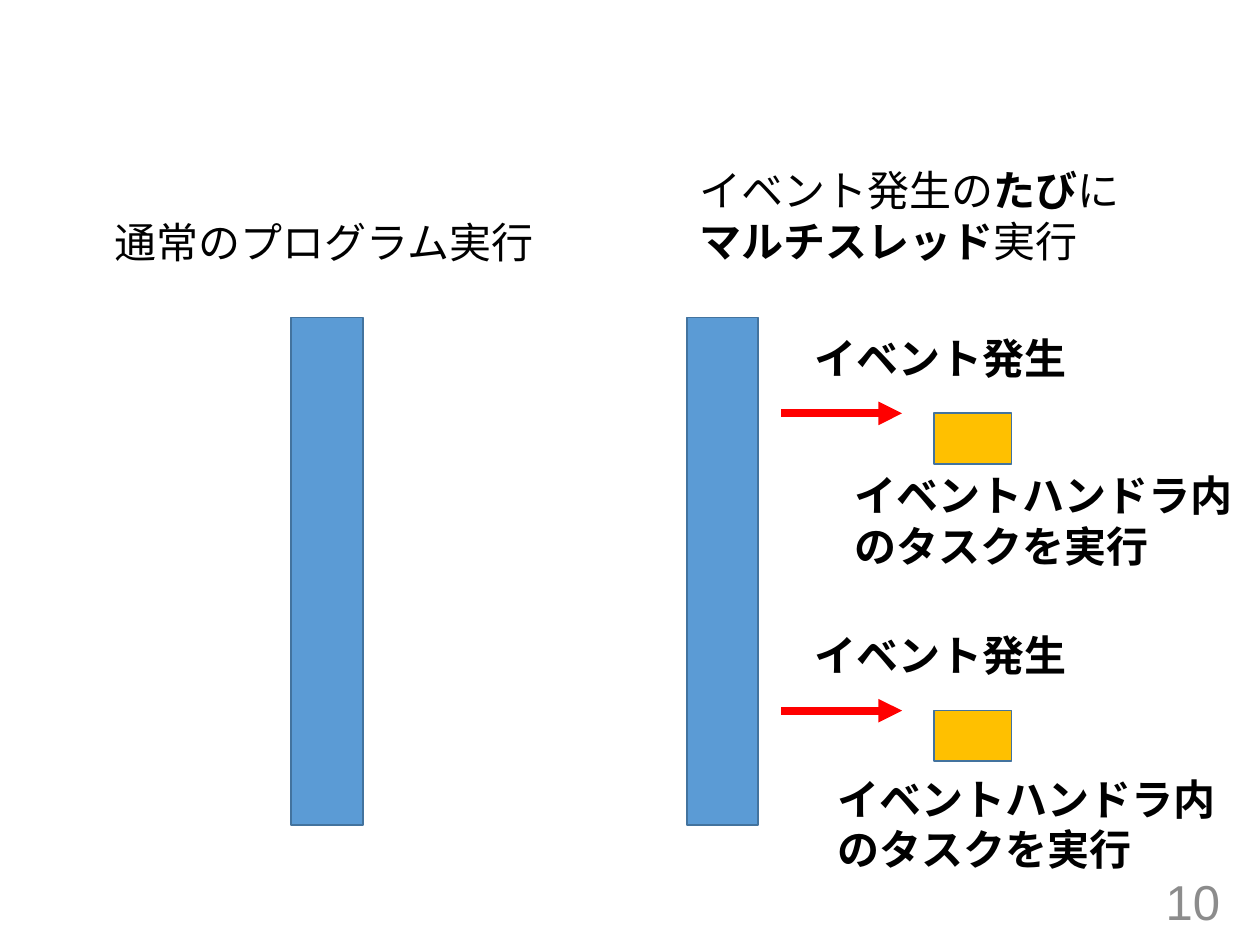
from dataclasses import dataclass

from lxml import etree
from pptx import Presentation
from pptx import util as u
from pptx.dml.color import RGBColor
from pptx.enum import shapes, text
from pptx.oxml import ns

Pt = u.Pt
BLACK = RGBColor(0x00, 0x00, 0x00)
GRAY = RGBColor(0x8C, 0x8C, 0x8C)
BLUE = RGBColor(0x5B, 0x9B, 0xD5)
OUTLINE = RGBColor(0x43, 0x73, 0x9E)
AMBER = RGBColor(0xFF, 0xC0, 0x00)
RED = RGBColor(0xFF, 0x00, 0x00)

LABEL_FONT = {"name": "Calibri", "size": Pt(24)}
NUMBER_FONT = {"name": "Arial", "size": Pt(28)}
BAR_TOP, BAR_WIDTH, BAR_HEIGHT = 181.4, 41, 290.2
TASK_LEFT, TASK_WIDTH, TASK_HEIGHT = 533.5, 44.6, 28.8
ARROW_START, ARROW_END = 446.4, 515.5


@dataclass(frozen=True)
class Box:
    left: float
    top: float
    width: float
    height: float

    def lengths(self) -> tuple:
        return Pt(self.left), Pt(self.top), Pt(self.width), Pt(self.height)


@dataclass(frozen=True)
class Run:
    content: str
    bold: bool = False


@dataclass(frozen=True)
class Event:
    arrow_y: float
    handler_left: float
    handler_top: float


EVENTS = (Event(236.2, 481, 265), Event(406.1, 471.6, 438.5))


def add_label(slide, box: Box, lines: list[list[Run]], font=LABEL_FONT,
              color=BLACK, alignment=text.PP_ALIGN.LEFT,
              anchor=text.MSO_ANCHOR.TOP, wrap=False) -> None:
    """Add a text box with one paragraph for each list of runs."""
    frame = slide.shapes.add_textbox(*box.lengths()).text_frame
    frame.word_wrap = wrap
    frame.vertical_anchor = anchor
    for index, runs in enumerate(lines):
        paragraph = frame.paragraphs[0] if index == 0 else frame.add_paragraph()
        paragraph.alignment = alignment
        for item in runs:
            run = paragraph.add_run()
            run.text = item.content
            for name, value in {**font, "bold": item.bold}.items():
                setattr(run.font, name, value)
            run.font.color.rgb = color


def add_block(slide, box: Box, fill: RGBColor) -> None:
    shape = slide.shapes.add_shape(shapes.MSO_SHAPE.RECTANGLE, *box.lengths())
    shape.shadow.inherit = False
    shape.fill.solid()
    shape.fill.fore_color.rgb = fill
    shape.line.color.rgb = OUTLINE
    shape.line.width = Pt(1)


def add_arrow(slide, y: float) -> None:
    arrow = slide.shapes.add_connector(
        shapes.MSO_CONNECTOR.STRAIGHT,
        Pt(ARROW_START), Pt(y), Pt(ARROW_END), Pt(y))
    arrow.line.color.rgb = RED
    arrow.line.width = Pt(4.5)
    etree.SubElement(arrow.line._get_or_add_ln(), ns.qn("a:tailEnd"),
                     type="triangle")
    etree.SubElement(arrow._element.spPr, ns.qn("a:effectLst"))


def add_event(slide, event: Event) -> None:
    """Add an event's task block, arrow and two labels."""
    add_block(slide, Box(TASK_LEFT, event.arrow_y, TASK_WIDTH, TASK_HEIGHT),
              AMBER)
    add_arrow(slide, event.arrow_y)
    add_label(slide, Box(458.6, event.arrow_y - 49.7, 159.8, 36),
              [[Run("イベント発生", True)]])
    add_label(slide, Box(event.handler_left, event.handler_top, 232.6, 65.5),
              [[Run("イベントハンドラ内", True)],
               [Run("のタスクを実行", True)]])


def main() -> None:
    presentation = Presentation()
    presentation.slide_width, presentation.slide_height = Pt(720), Pt(540)
    slide = presentation.slides.add_slide(presentation.slide_layouts[6])

    add_label(slide, Box(542.2, 500.4, 162, 28.8), [[Run("10")]],
              NUMBER_FONT, GRAY, text.PP_ALIGN.RIGHT,
              text.MSO_ANCHOR.MIDDLE, wrap=True)
    add_label(slide, Box(58.3, 120.2, 257, 36), [[Run("通常のプログラム実行")]])
    add_label(slide, Box(392.4, 90.7, 257, 65.5),
              [[Run("イベント発生の"), Run("たび", True), Run("に")],
               [Run("マルチスレッド", True), Run("実行")]])
    for left in (166.3, 392.4):
        add_block(slide, Box(left, BAR_TOP, BAR_WIDTH, BAR_HEIGHT), BLUE)
    for event in EVENTS:
        add_event(slide, event)

    presentation.save("out.pptx")


if __name__ == "__main__":
    main()
